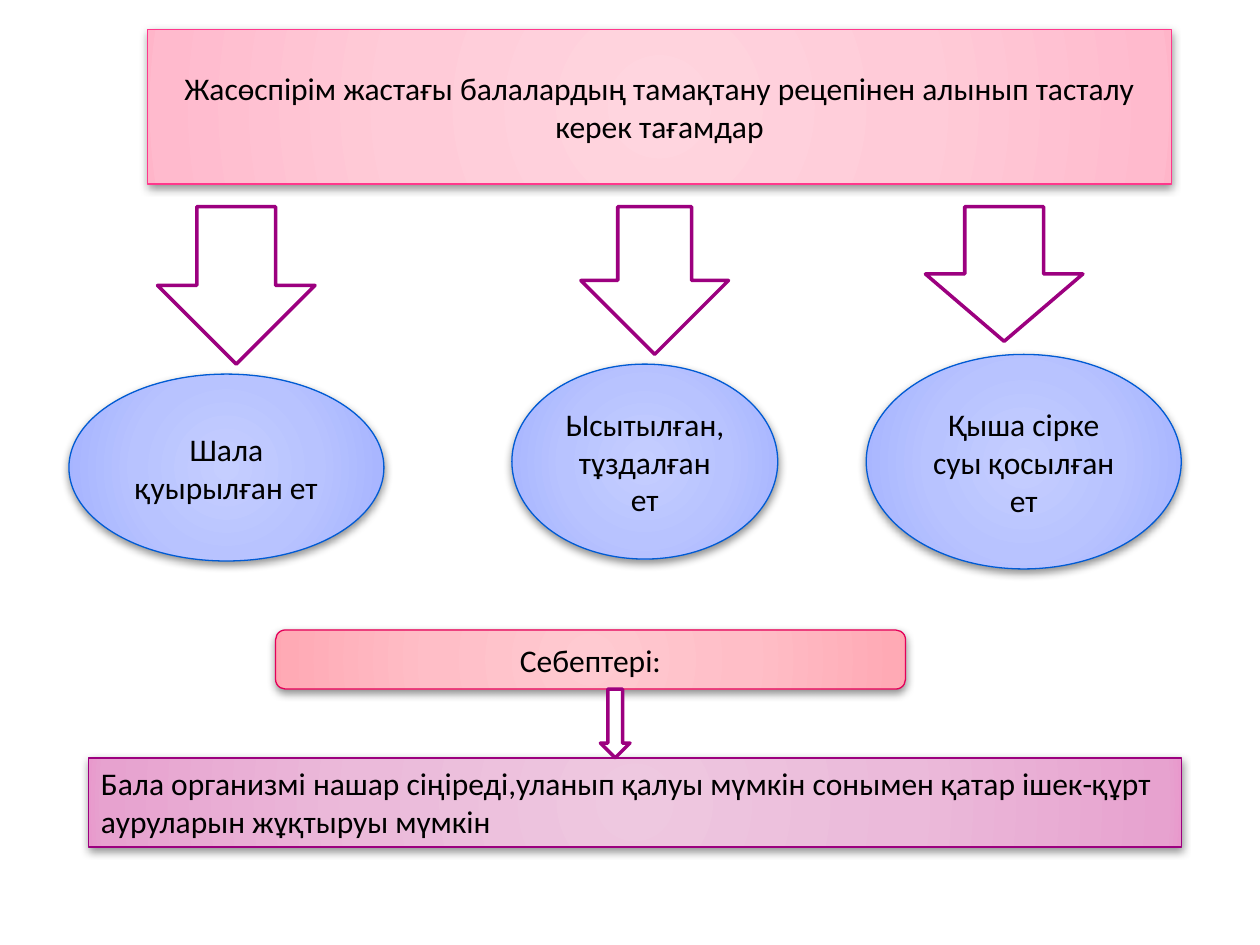
from dataclasses import dataclass

import lxml.etree
import pptx
import pptx.dml.color
import pptx.enum.shapes
import pptx.enum.text
import pptx.oxml.ns
import pptx.util

Pt = pptx.util.Pt
RGBColor = pptx.dml.color.RGBColor
Preset = pptx.enum.shapes.MSO_SHAPE
Anchor = pptx.enum.text.MSO_ANCHOR
Align = pptx.enum.text.PP_ALIGN
AutoSize = pptx.enum.text.MSO_AUTO_SIZE
qn = pptx.oxml.ns.qn

BLACK = RGBColor(0x00, 0x00, 0x00)
WHITE = RGBColor(0xFF, 0xFF, 0xFF)
PURPLE = RGBColor(0x9C, 0x00, 0x7F)
PINK = RGBColor(0xFF, 0x38, 0x8C)
BLUE = RGBColor(0x00, 0x5B, 0xD3)
CRIMSON = RGBColor(0xE4, 0x00, 0x59)

STOP_POSITIONS = (0, 50, 97, 100)
FONT_FORMAT = {"name": "Calibri", "size": Pt(18)}
CENTRED = {"vertical_anchor": Anchor.MIDDLE, "word_wrap": True}
GROWING = {
    "vertical_anchor": Anchor.TOP,
    "word_wrap": True,
    "auto_size": AutoSize.SHAPE_TO_FIT_TEXT,
}


@dataclass(frozen=True)
class Box:
    """A place on the slide, in points."""

    left: float
    top: float
    width: float
    height: float


@dataclass(frozen=True)
class Palette:
    """Outline colour and gradient colours from the centre outwards."""

    outline: RGBColor
    stops: tuple[RGBColor, ...]


@dataclass(frozen=True)
class Panel:
    preset: Preset
    box: Box
    palette: Palette
    text: str
    align: Align = Align.CENTER
    centred: bool = True


def colours(*codes: str) -> tuple[RGBColor, ...]:
    return tuple(RGBColor.from_string(code) for code in codes)


PINK_GLOW = Palette(PINK, colours("FFD5DF", "FFCBD8", "FFBACD", "FFB5C9"))
BLUE_GLOW = Palette(BLUE, colours("C5CEFF", "B8C3FF", "A2B1FF", "9BACFF"))
RED_GLOW = Palette(CRIMSON, colours("FFCAD1", "FFBEC7", "FFAAB5", "FFA4B0"))
PURPLE_GLOW = Palette(PURPLE, colours("EEC8E0", "EBBADA", "E7A2CF", "E899CC"))

TITLE = Panel(
    Preset.RECTANGLE, Box(84.4, 16.9, 585, 88.3), PINK_GLOW,
    "Жасөспірім жастағы балалардың тамақтану рецепінен алынып тасталу керек тағамдар",
)
FOODS = (
    Panel(Preset.OVAL, Box(39.4, 213.8, 180, 106.8), BLUE_GLOW, "Шала қуырылған ет"),
    Panel(Preset.OVAL, Box(292.5, 208.1, 151.9, 111.4), BLUE_GLOW, "Ысытылған,тұздалған ет"),
    Panel(Preset.OVAL, Box(495, 202.5, 180, 122.6), BLUE_GLOW, "Қыша сірке суы қосылған ет"),
)
REASONS_HEADING = Panel(
    Preset.ROUNDED_RECTANGLE, Box(157.5, 360, 360, 33.8), RED_GLOW, "Себептері:",
)
REASONS = Panel(
    Preset.RECTANGLE, Box(50.6, 433.1, 624.4, 50.9), PURPLE_GLOW,
    "Бала организмі нашар сіңіреді,уланып қалуы мүмкін сонымен қатар "
    "ішек-құрт ауруларын жұқтыруы мүмкін",
    align=Align.LEFT, centred=False,
)
FOOD_ARROWS = (
    Box(90, 118.1, 90, 90),
    Box(331.9, 118.1, 84.4, 84.4),
    Box(528.8, 118.1, 90, 77),
)
REASONS_ARROW = Box(343.1, 393.8, 16.9, 39.3)


def apply_format(target: object, values: dict[str, object]) -> None:
    for attribute, value in values.items():
        setattr(target, attribute, value)


def add_node(parent: lxml.etree.ElementBase, tag: str, **attributes: object):
    texts = {name: str(value) for name, value in attributes.items()}
    return lxml.etree.SubElement(parent, qn(tag), texts)


def fill_radially(shape, stops: tuple[RGBColor, ...]) -> None:
    shape.fill.gradient()
    gradient = shape.fill._xPr.find(qn("a:gradFill"))
    for child in list(gradient):
        gradient.remove(child)
    stop_list = add_node(gradient, "a:gsLst")
    for position, colour in zip(STOP_POSITIONS, stops):
        stop = add_node(stop_list, "a:gs", pos=position * 1000)
        add_node(stop, "a:srgbClr", val=colour)
    circle = add_node(gradient, "a:path", path="circle")
    add_node(circle, "a:fillToRect", l=50000, t=50000, r=50000, b=50000)


def drop_shadow(shape) -> None:
    effects = shape.fill._xPr.find(qn("a:effectLst"))
    shadow = add_node(
        effects, "a:outerShdw", blurRad=Pt(5), dist=Pt(2), dir=5400000, rotWithShape=0
    )
    black = add_node(shadow, "a:srgbClr", val=BLACK)
    add_node(black, "a:alpha", val=43000)


def add_outlined(slide, preset: Preset, box: Box, outline: RGBColor, weight: float):
    shape = slide.shapes.add_shape(
        preset, Pt(box.left), Pt(box.top), Pt(box.width), Pt(box.height)
    )
    shape.shadow.inherit = False
    shape.line.color.rgb = outline
    shape.line.width = Pt(weight)
    return shape


def add_panel(slide, panel: Panel) -> None:
    shape = add_outlined(slide, panel.preset, panel.box, panel.palette.outline, 0.75)
    fill_radially(shape, panel.palette.stops)
    drop_shadow(shape)
    apply_format(shape.text_frame, CENTRED if panel.centred else GROWING)
    paragraph = shape.text_frame.paragraphs[0]
    paragraph.alignment = panel.align
    run = paragraph.add_run()
    run.text = panel.text
    apply_format(run.font, FONT_FORMAT)
    run.font.color.rgb = BLACK


def add_arrow(slide, box: Box) -> None:
    arrow = add_outlined(slide, Preset.DOWN_ARROW, box, PURPLE, 2)
    arrow.fill.solid()
    arrow.fill.fore_color.rgb = WHITE


def main() -> None:
    presentation = pptx.Presentation()
    presentation.slide_width = Pt(720)
    presentation.slide_height = Pt(540)
    slide = presentation.slides.add_slide(presentation.slide_layouts[6])

    add_panel(slide, TITLE)
    for box in FOOD_ARROWS:
        add_arrow(slide, box)
    for panel in (*FOODS, REASONS_HEADING, REASONS):
        add_panel(slide, panel)
    add_arrow(slide, REASONS_ARROW)

    presentation.save("out.pptx")


if __name__ == "__main__":
    main()
